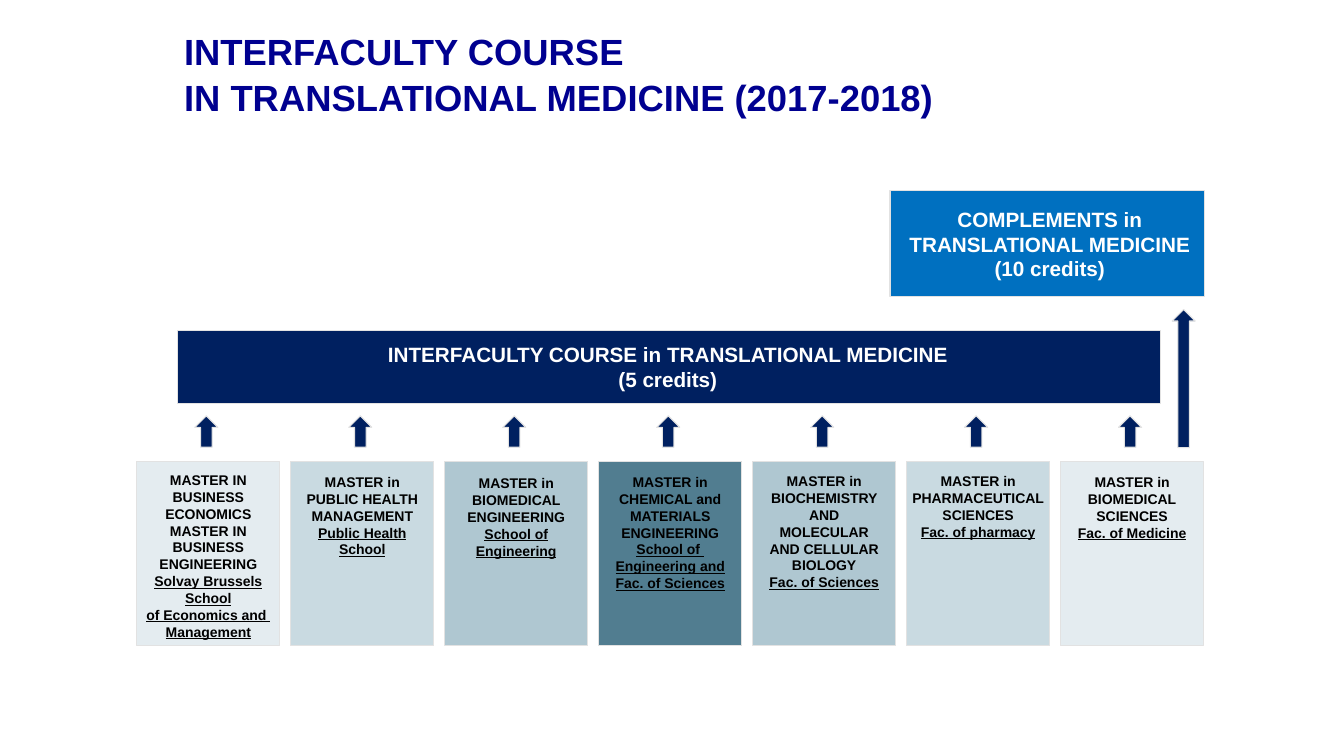
import pptx
import pptx.dml.color
import pptx.enum.shapes
import pptx.enum.text
import pptx.util

Cm = pptx.util.Cm
Pt = pptx.util.Pt
RGBColor = pptx.dml.color.RGBColor
MSO_SHAPE = pptx.enum.shapes.MSO_SHAPE
PP_ALIGN = pptx.enum.text.PP_ALIGN

TITLE_BLUE = RGBColor(0x00, 0x00, 0x90)
NAVY = RGBColor(0x00, 0x20, 0x60)
BLUE = RGBColor(0x00, 0x70, 0xC0)
BORDER = RGBColor(0xE2, 0xE2, 0xE2)
BLACK = RGBColor(0x00, 0x00, 0x00)
WHITE = RGBColor(0xFF, 0xFF, 0xFF)
PALE = RGBColor(0xE4, 0xEC, 0xF0)
LIGHT = RGBColor(0xC9, 0xDA, 0xE1)
MEDIUM = RGBColor(0xAF, 0xC7, 0xD1)
DARK = RGBColor(0x51, 0x7D, 0x90)

CARD_LEFT, CARD_TOP, CARD_PITCH = 3.45, 11.62, 3.88
CARD_WIDTH, CARD_HEIGHT = 3.6, 4.65
ARROW_WIDTH, ARROW_HEIGHT = 0.58, 0.79

MASTERS = [
    (PALE, 4.22, 11.76, 4.52,
     ["MASTER IN BUSINESS ECONOMICS", "MASTER IN BUSINESS ENGINEERING"],
     ["Solvay Brussels School", "of Economics and ", "Management"]),
    (LIGHT, 3.6, 11.81, 2.39,
     ["MASTER in", "PUBLIC HEALTH", "MANAGEMENT"], ["Public Health School"]),
    (MEDIUM, 4.17, 11.84, 2.39,
     ["MASTER in", "BIOMEDICAL ENGINEERING"], ["School of Engineering"]),
    (DARK, 4.01, 11.81, 3.25,
     ["MASTER in CHEMICAL and", "MATERIALS ENGINEERING"],
     ["School of ", "Engineering and Fac. of Sciences"]),
    (MEDIUM, 3.6, 11.79, 3.25,
     ["MASTER in", "BIOCHEMISTRY AND MOLECULAR", "AND CELLULAR BIOLOGY"],
     ["Fac. of Sciences"]),
    (LIGHT, 3.91, 11.79, 1.96,
     ["MASTER in", "PHARMACEUTICAL", "SCIENCES"], ["Fac. of pharmacy"]),
    (PALE, 3.6, 11.81, 1.96,
     ["MASTER in", "BIOMEDICAL", "SCIENCES"], ["Fac. of Medicine"]),
]


class SlideBuilder:
    font_name = "Arial"
    border_width = 0.75

    def __init__(self, slide):
        self.slide = slide

    def block(self, left, top, width, height, fill, kind=MSO_SHAPE.RECTANGLE):
        shape = self.slide.shapes.add_shape(kind, Cm(left), Cm(top), Cm(width), Cm(height))
        shape.shadow.inherit = False
        shape.fill.solid()
        shape.fill.fore_color.rgb = fill
        shape.line.color.rgb = BORDER
        shape.line.width = Pt(self.border_width)

    def arrow(self, left, top, height=ARROW_HEIGHT):
        self.block(left, top, ARROW_WIDTH, height, NAVY, MSO_SHAPE.UP_ARROW)

    def text(self, left, top, width, height, lines, size, color,
             underlined=(), align=PP_ALIGN.CENTER, spacing=1.0):
        box = self.slide.shapes.add_textbox(Cm(left), Cm(top), Cm(width), Cm(height))
        frame = box.text_frame
        frame.word_wrap = True
        frame.text = "\n".join([*lines, *underlined])
        for index, paragraph in enumerate(frame.paragraphs):
            paragraph.alignment = align
            paragraph.line_spacing = spacing
            paragraph.font.name = self.font_name
            paragraph.font.size = Pt(size)
            paragraph.font.bold = True
            paragraph.font.color.rgb = color
            if index >= len(lines):
                paragraph.font.underline = True


def main():
    presentation = pptx.Presentation()
    presentation.slide_width = Cm(33.87)
    presentation.slide_height = Cm(19.05)
    slide = presentation.slides.add_slide(presentation.slide_layouts[6])
    builder = SlideBuilder(slide)

    builder.text(4.39, 0.56, 24.97, 2.31,
                 ["INTERFACULTY COURSE\vIN TRANSLATIONAL MEDICINE (2017-2018)"],
                 26, TITLE_BLUE, align=PP_ALIGN.LEFT, spacing=1.05)

    builder.block(4.47, 8.33, 24.77, 1.83, NAVY)
    builder.text(4.83, 8.48, 24, 1.52,
                 ["INTERFACULTY COURSE in TRANSLATIONAL MEDICINE", "(5 credits)"],
                 14.8, WHITE)
    builder.block(22.43, 4.8, 7.92, 2.67, BLUE)
    builder.text(21.69, 5.08, 9.53, 2.16,
                 ["COMPLEMENTS in\vTRANSLATIONAL MEDICINE", "(10 credits)"],
                 14.8, WHITE)

    for index, (fill, width, top, height, degree, school) in enumerate(MASTERS):
        left = CARD_LEFT + index * CARD_PITCH
        builder.block(left, CARD_TOP, CARD_WIDTH, CARD_HEIGHT, fill)
        builder.text(left + (CARD_WIDTH - width) / 2, top, width, height,
                     degree, 10, BLACK, school)
        builder.arrow(left + 1.46, 10.48)
    builder.arrow(29.54, 7.8, 3.48)

    presentation.save("out.pptx")


if __name__ == "__main__":
    main()
